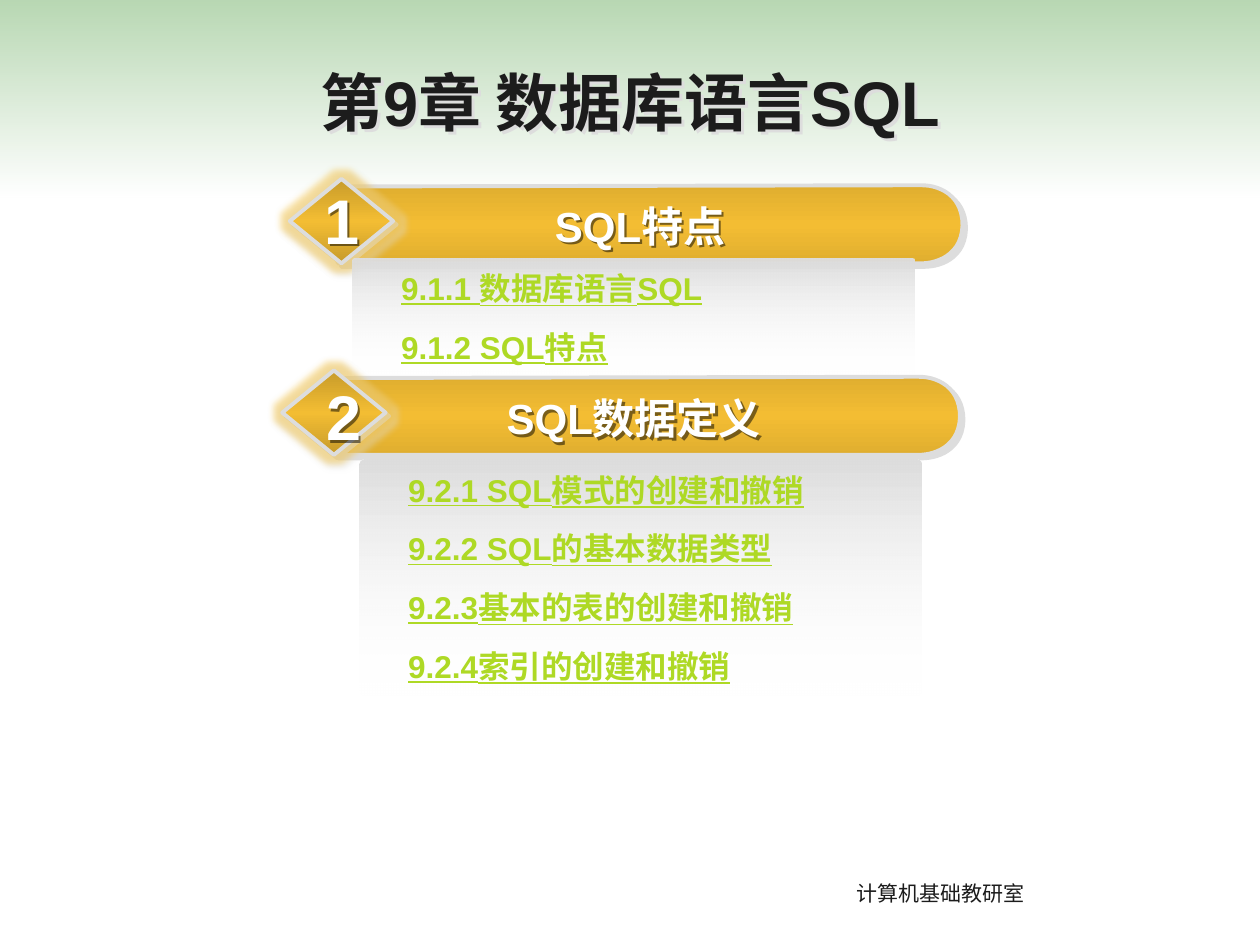
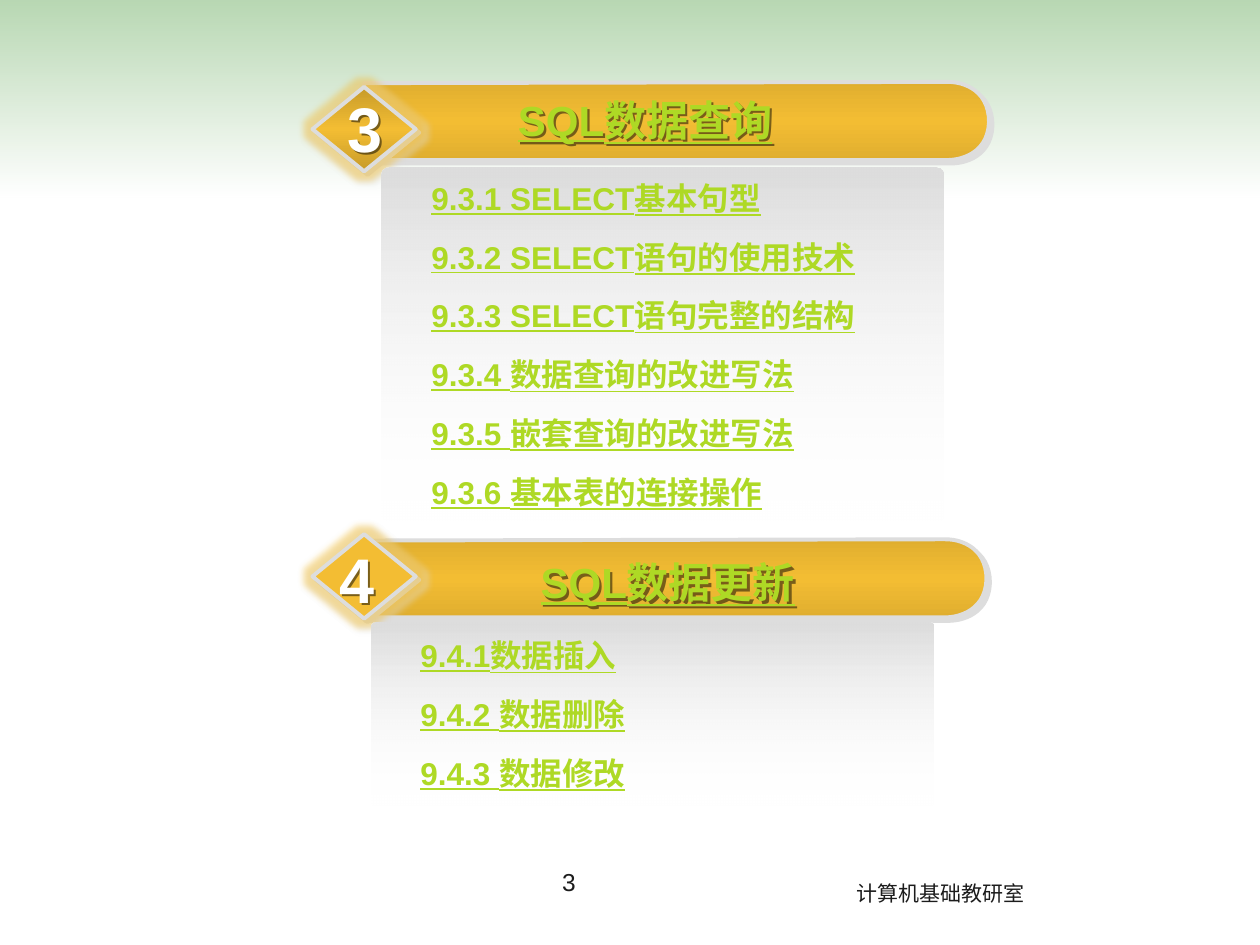
"""Build the two chapter outline slides."""
import lxml.etree
import pptx
import pptx.dml.color
import pptx.enum.shapes
import pptx.enum.text
import pptx.oxml.ns
import pptx.util

SCALE = 9144
FINE = 100
INK, WHITE, LINK, GREY, GOLD = "1C1C1C", "FFFFFF", "AED925", "DDDDDD", "F3BD33"
LATIN, ASIAN = "Arial", "Noto Sans CJK JP"
BAND = [(0, "4E9D41", 40), (100, WHITE, 40)]
BAR = [(0, "E0AE2F", 100), (50, GOLD, 100), (100, "E0AE2F", 100)]
GEM = [(0, "C79B2A", 100), (50, GOLD, 100), (100, "C79B2A", 100)]
PANEL = [(0, GREY, 100), (100, WHITE, 0)]
EDGE = (GREY, 100, 2.8)
DIM = ("000000", 50, 1.8)
KINDS = pptx.enum.shapes.MSO_SHAPE
MIDDLE = pptx.enum.text.MSO_ANCHOR.MIDDLE
CENTER = pptx.enum.text.PP_ALIGN.CENTER
LEFT = pptx.enum.text.PP_ALIGN.LEFT


def px(*sizes):
    """Turn px lengths into EMU."""
    return [pptx.util.Emu(size * SCALE) for size in sizes]


def rgb(code):
    """Turn a hex string into a colour."""
    return pptx.dml.color.RGBColor.from_string(code)


def node(root, tag, **attrs):
    """Add a drawing element under root."""
    item = lxml.etree.SubElement(root, pptx.oxml.ns.qn("a:" + tag))
    for key, value in attrs.items():
        item.set(key, str(value))
    return item


def tint(root, code, alpha):
    """Add a colour with its opacity in percent."""
    node(node(root, "srgbClr", val=code), "alpha", val=alpha * 1000)


def blend(shape, stops):
    """Give a shape a downward gradient."""
    shape.fill.background()
    props = shape.element.spPr
    blank = props.find(pptx.oxml.ns.qn("a:noFill"))
    grad = node(props, "gradFill", rotWithShape=1)
    props.replace(blank, grad)
    track = node(grad, "gsLst")
    for place, code, alpha in stops:
        tint(node(track, "gs", pos=place * 1000), code, alpha)
    node(grad, "lin", ang=5400000, scaled=1)


def cast(shape, shadow=None, halo=None):
    """Set the shadow and glow of a shape."""
    shape.shadow.inherit = False
    effects = shape.element.spPr.find(pptx.oxml.ns.qn("a:effectLst"))
    if halo:
        code, alpha, size = halo
        tint(node(effects, "glow", rad=pptx.util.Pt(size)), code, alpha)
    if shadow:
        code, alpha, dist = shadow
        drop = node(effects, "outerShdw", blurRad=0, dist=pptx.util.Pt(dist),
                    dir=2700000, algn="ctr", rotWithShape=0)
        tint(drop, code, alpha)


def write(frame, text, size=18, color=INK, bold=True, under=False, align=CENTER,
          font=LATIN, indent=0, gap=0):
    """Fill a text frame, one paragraph for each line."""
    for row, line in enumerate(text.split("\n")):
        para = frame.paragraphs[0] if row == 0 else frame.add_paragraph()
        para.alignment = align
        if indent:
            props = para._p.get_or_add_pPr()
            props.set("marL", "0")
            props.set("indent", str(indent * SCALE))
        if row and gap:
            para.space_before = pptx.util.Pt(gap)
        run = para.add_run()
        run.text = line
        face = run.font
        face.size, face.bold = pptx.util.Pt(size), bold
        if under:
            face.underline = True
        face.color.rgb = rgb(color)
        face.name = font
        node(run._r.get_or_add_rPr(), "ea", typeface=ASIAN)


def curve(start, first, second, end, steps=14):
    """Sample a cubic curve, leaving out its start."""
    points = []
    for step in range(1, steps + 1):
        t = step / steps
        parts = ((1 - t) ** 3, 3 * t * (1 - t) ** 2, 3 * t * t * (1 - t), t ** 3)
        points.append(tuple(
            sum(w * p[axis] for w, p in zip(parts, (start, first, second, end)))
            for axis in (0, 1)))
    return points


class Deck:
    """Hold the style and the current slide."""

    def __init__(self):
        """Start a deck of ten by seven and a half inches."""
        self.file = pptx.Presentation()
        self.file.slide_width, self.file.slide_height = px(1000, 750)

    def page(self, title=None):
        """Add a slide with the shared band and footer."""
        layout = self.file.slide_layouts[5 if title else 6]
        self.slide = self.file.slides.add_slide(layout)
        self.shapes = self.slide.shapes
        self.shape(KINDS.RECTANGLE, 0, 0, 1000, 157, BAND)
        self.label("计算机基础教研室", 670, 694, 171, 30, size=12, bold=False,
                   align=LEFT, font=ASIAN)
        if title:
            self.title(title)

    def title(self, text):
        """Place and format the title."""
        box = self.shapes.title
        self.shapes._spTree.append(box.element)
        box.left, box.top, box.width, box.height = px(0, 33, 1000, 94)
        box.fill.background()
        cast(box, (GREY, 100, 2.5))
        box.text_frame.vertical_anchor = MIDDLE
        box.text_frame.auto_size = pptx.enum.text.MSO_AUTO_SIZE.NONE
        write(box.text_frame, text, size=36)

    def label(self, text, x, y, w, h, shadow=None, **style):
        """Add a wrapping text box."""
        box = self.shapes.add_textbox(*px(x, y, w, h))
        box.text_frame.word_wrap = True
        if shadow:
            cast(box, shadow)
        write(box.text_frame, text, **style)

    def finish(self, shape, stops, edged=False, halo=None):
        """Set the fill, line and effects of a shape."""
        blend(shape, stops)
        if edged:
            shape.line.color.rgb = rgb(GREY)
            shape.line.width = pptx.util.Pt(2.25)
        else:
            shape.line.fill.background()
        cast(shape, EDGE if edged else None, halo)

    def shape(self, kind, x, y, w, h, stops, **style):
        """Add a preset shape."""
        item = self.shapes.add_shape(kind, *px(x, y, w, h))
        self.finish(item, stops, **style)
        return item

    def bar(self, x, y):
        """Add a gold bar with a rounded right end."""
        points = [(0, 62), (463, 62)]
        points += curve((463, 62), (475, 62), (495, 56), (496, 32))
        points += curve((496, 32), (496, 8), (478, 0), (463, 0))
        pen = self.shapes.build_freeform(x * FINE, (y + 1) * FINE, scale=SCALE / FINE)
        pen.add_line_segments([(round((x + dx) * FINE), round((y + dy) * FINE))
                               for dx, dy in points], close=True)
        self.finish(pen.convert_to_shape(), BAR, edged=True)

    def head(self, digit, text, bar, gem, mark, name, stops=GEM, link=False):
        """Add a bar with its numbered diamond and heading."""
        self.bar(*bar)
        self.shape(KINDS.DIAMOND, *gem, 82, 67, stops, edged=True,
                   halo=(GOLD, 45, 8))
        self.label(text, *name, 50, size=24, color=LINK if link else WHITE,
                   under=link, shadow=DIM)
        self.label(digit, *mark, 71, size=36, color=WHITE, shadow=DIM)

    def panel(self, text, x, y, h):
        """Add a fading panel that lists sections."""
        box = self.shape(KINDS.ROUNDED_RECTANGLE, x, y, 446, h, PANEL)
        box.adjustments[0] = 0.02
        box.text_frame.vertical_anchor = MIDDLE
        box.text_frame.word_wrap = False
        write(box.text_frame, text, color=LINK, under=True, align=LEFT,
              indent=28, gap=12)


def main():
    """Build and save the slides."""
    deck = Deck()
    deck.page("第9章 数据库语言SQL")
    deck.head("1", "SQL特点", (268, 147), (230, 142), (245, 139, 53), (312, 154, 392))
    deck.head("2", "SQL数据定义", (266, 299), (224, 294), (249, 295, 45), (307, 307, 392))
    deck.panel("9.1.1 数据库语言SQL\n9.1.2 SQL特点", 280, 205, 94)
    deck.panel("9.2.1 SQL模式的创建和撤销\n9.2.2 SQL的基本数据类型\n"
               "9.2.3基本的表的创建和撤销\n9.2.4索引的创建和撤销", 285, 365, 187)

    deck.page()
    deck.head("3", "SQL数据查询", (289, 65), (248, 69), (263, 66, 53), (316, 70, 392),
              link=True)
    deck.panel("9.3.1 SELECT基本句型\n9.3.2 SELECT语句的使用技术\n"
               "9.3.3 SELECT语句完整的结构\n9.3.4 数据查询的改进写法\n"
               "9.3.5 嵌套查询的改进写法\n9.3.6 基本表的连接操作", 303, 133, 281)
    deck.head("4", "SQL数据更新", (287, 428), (248, 424), (257, 424, 53), (319, 437, 422),
              stops=[(0, GOLD, 100), (100, GOLD, 100)], link=True)
    deck.panel("9.4.1数据插入\n9.4.2 数据删除\n9.4.3 数据修改", 295, 494, 145)
    deck.label("3", 335, 683, 233, 52, size=14, bold=False)
    deck.file.save("out.pptx")


if __name__ == "__main__":
    main()
